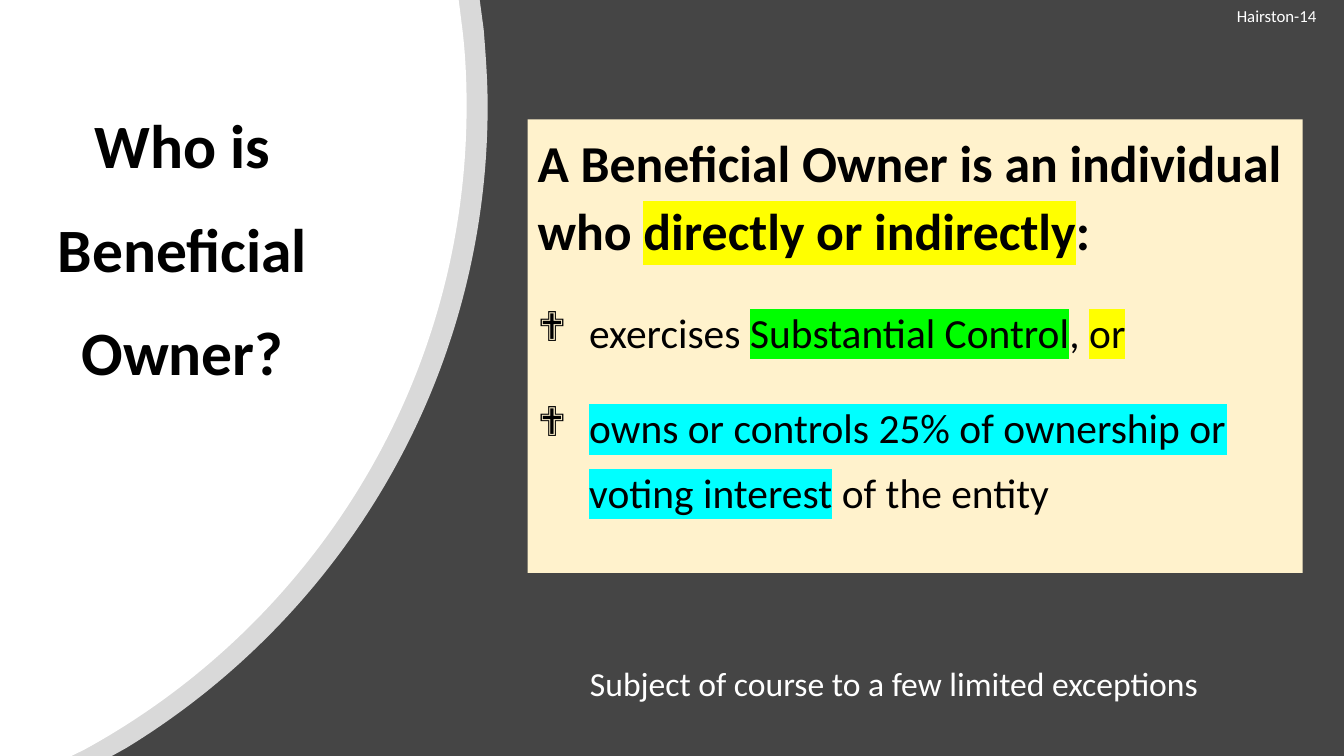
from lxml.etree import SubElement
from pptx import Presentation
from pptx.dml.color import RGBColor
from pptx.enum.shapes import MSO_SHAPE
from pptx.enum.text import MSO_ANCHOR, PP_ALIGN
from pptx.oxml import parse_xml
from pptx.oxml.ns import nsdecls, qn
from pptx.util import Cm, Pt

WIDTH, HEIGHT = 33.87, 19.05
WHITE, BLACK, CREAM, CHARCOAL = "FFFFFF", "000000", "FFF2CC", "454545"
YELLOW, GREEN, CYAN = "FFFF00", "00FF00", "00FFFF"


def rgb(value):
    return RGBColor.from_string(value)


def add_run(p, text, size, color=WHITE, bold=False, highlight=None):
    r = p.add_run()
    r.text = text
    r.font.name = "Calibri"
    r.font.size = Pt(size)
    r.font.bold = bold
    r.font.color.rgb = rgb(color)
    if highlight:
        mark = f'<a:highlight {nsdecls("a")}><a:srgbClr val="{highlight}"/></a:highlight>'
        r.font._element.find(qn("a:solidFill")).addnext(parse_xml(mark))


def format_paragraph(p, align=PP_ALIGN.LEFT, line=1.0, before=0, after=0, bullet=None, indent=1.3):
    p.alignment = align
    p.line_spacing = line
    p.space_before, p.space_after = Pt(before), Pt(after)
    if bullet:
        pPr = p._p.get_or_add_pPr()
        pPr.set("marL", str(Cm(indent)))
        pPr.set("indent", str(-Cm(indent)))
        SubElement(pPr, qn("a:buFont")).set("typeface", "Wingdings")
        SubElement(pPr, qn("a:buChar")).set("char", bullet)


class SlideBuilder:
    def __init__(self, prs, background):
        self.s = prs.slides.add_slide(prs.slide_layouts.get_by_name("Title Only"))
        fill = self.s.background.fill
        fill.solid()
        fill.fore_color.rgb = rgb(background)

    def paint(self, sp, color, alpha=None):
        sp.shadow.inherit = False
        sp.line.fill.background()
        sp.fill.solid()
        sp.fill.fore_color.rgb = rgb(color)
        if alpha:
            clr = sp._element.spPr.find(qn("a:solidFill"))[0]
            SubElement(clr, qn("a:alpha")).set("val", str(alpha * 1000))

    def title(self, text, box, size):
        sp = self.s.shapes.title
        sp.left, sp.top, sp.width, sp.height = map(Cm, box)
        self.s.shapes._spTree.append(sp._element)
        tf = sp.text_frame
        tf.word_wrap = True
        tf.vertical_anchor = MSO_ANCHOR.TOP
        p = tf.paragraphs[0]
        format_paragraph(p, align=PP_ALIGN.CENTER, line=1.4)
        add_run(p, text, size, BLACK, bold=True)

    def text(self, text, box, size, **layout):
        tf = self.s.shapes.add_textbox(*map(Cm, box)).text_frame
        tf.word_wrap = True
        p = tf.paragraphs[0]
        format_paragraph(p, **layout)
        add_run(p, text, size)

    def panel(self, box, color, paragraphs):
        sp = self.s.shapes.add_shape(MSO_SHAPE.RECTANGLE, *map(Cm, box))
        self.paint(sp, color)
        tf = sp.text_frame
        tf.word_wrap = True
        tf.vertical_anchor = MSO_ANCHOR.TOP
        for i, (layout, font, runs) in enumerate(paragraphs):
            p = tf.add_paragraph() if i else tf.paragraphs[0]
            format_paragraph(p, **layout)
            for text, highlight in runs:
                add_run(p, text, color=BLACK, highlight=highlight, **font)

    def curved_side(self, top, shoulder, upper, lower, foot, alpha=None):
        points = [(top, 0), shoulder, *upper, *lower, (foot, HEIGHT), (0, HEIGHT)]
        fb = self.s.shapes.build_freeform(0, 0)
        fb.add_line_segments([(Cm(x), Cm(y)) for x, y in points], close=True)
        sp = fb.convert_to_shape()
        lines = list(sp._element.iter(qn("a:lnTo")))
        for start in (2, 5):
            first, *rest = lines[start:start + 3]
            first.tag = qn("a:cubicBezTo")
            for line in rest:
                first.append(line[0])
                line.getparent().remove(line)
        self.paint(sp, WHITE, alpha)


def main():
    prs = Presentation()
    prs.slide_width, prs.slide_height = Cm(WIDTH), Cm(HEIGHT)
    slide = SlideBuilder(prs, CHARCOAL)

    slide.text("Hairston-14", (30.92, 0.03, 2.95, 0.76), 12, after=6)
    slide.curved_side(12.09, (12.19, 0.74),
                      [(12.24, 1.37), (12.29, 2.03), (12.29, 2.67)],
                      [(12.29, 9.53), (8.64, 15.52), (3.18, 18.85)], 2.82, alpha=80)
    slide.curved_side(11.56, (11.66, 0.79),
                      [(11.73, 1.4), (11.76, 2.03), (11.76, 2.67)],
                      [(11.76, 9.68), (7.85, 15.77), (2.11, 18.9)], 1.8)
    slide.text("Subject of course to a few limited exceptions",
               (12.98, 16.59, 19.1, 1.27), 24, align=PP_ALIGN.CENTER)

    heading = dict(line=1.1, before=16, after=12)
    item = dict(line=1.3, before=10, after=12, bullet="❖")
    slide.panel((13.3, 3.01, 19.53, 11.43), CREAM, [
        (heading, dict(size=37, bold=True), [
            ("A Beneficial Owner is an individual who ", None),
            ("directly or indirectly", YELLOW),
            (":", None),
        ]),
        (item, dict(size=29.6), [
            ("exercises ", None),
            ("Substantial Control", GREEN),
            (", ", None),
            ("or", YELLOW),
        ]),
        (item, dict(size=29.6), [
            ("owns or controls 25% of ownership or voting interest", CYAN),
            (" of the entity", None),
        ]),
    ])
    slide.title("Who is Beneficial Owner?", (0.61, 1.83, 7.98, 8.15), 44)
    prs.save("out.pptx")


if __name__ == "__main__":
    main()
